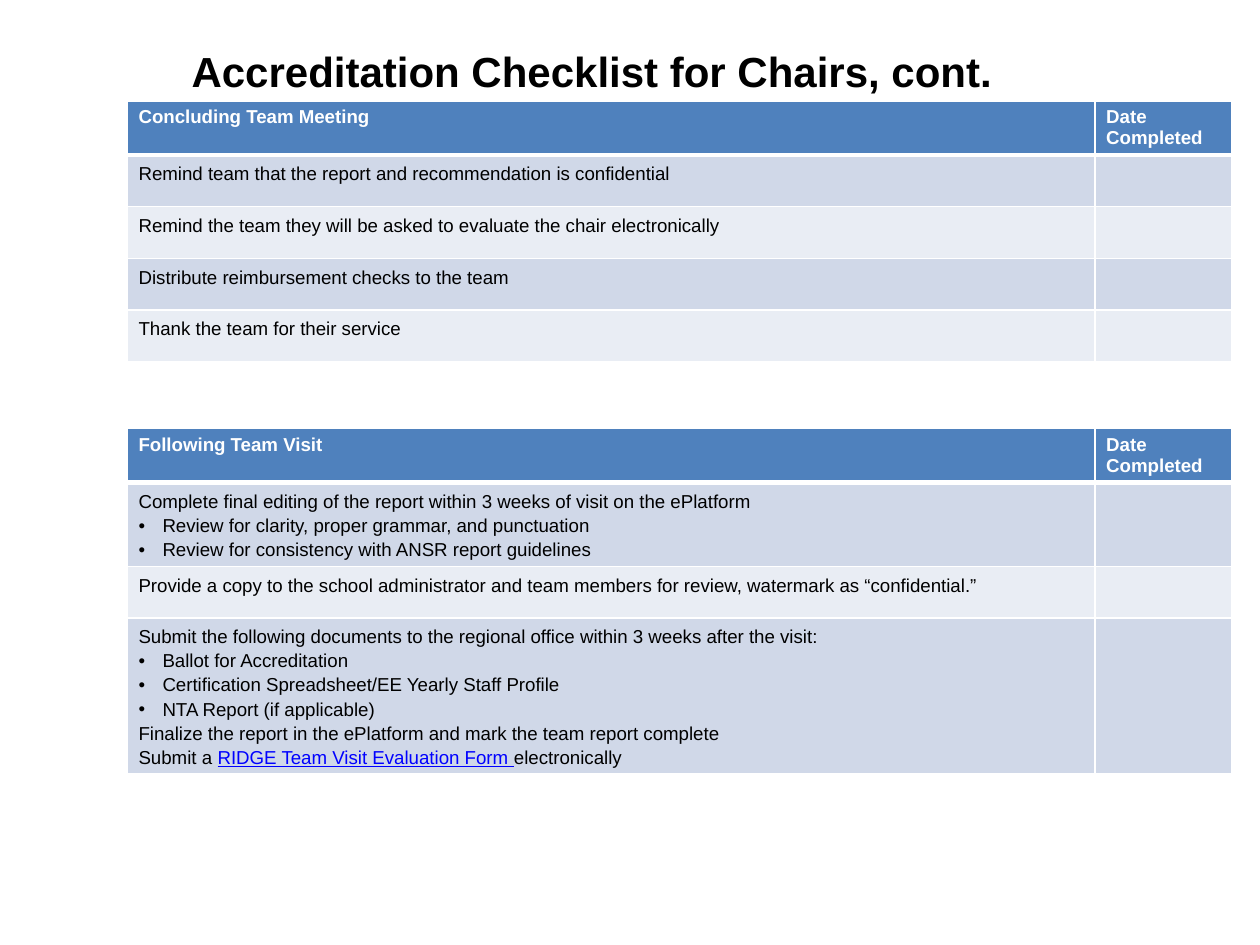
from dataclasses import dataclass

from lxml.etree import SubElement
from pptx import Presentation
from pptx.dml.color import RGBColor
from pptx.enum.text import MSO_ANCHOR, PP_ALIGN
from pptx.oxml.ns import qn
from pptx.util import Inches, Pt

BLACK = RGBColor(0x00, 0x00, 0x00)
WHITE = RGBColor(0xFF, 0xFF, 0xFF)
LINK_BLUE = RGBColor(0x00, 0x00, 0xFF)
HEADER_BLUE = RGBColor(0x4F, 0x81, 0xBD)
BANDS = (RGBColor(0xD0, 0xD8, 0xE8), RGBColor(0xE9, 0xED, 0xF4))

FONT = "Arial"
TABLE_LEFT = 1.01
COLUMN_WIDTHS = (7.68, 1.09)
HEADER_HEIGHT = 0.43
ROW_HEIGHT = 0.41
BULLET_INDENT = 0.19
BODY_FORMAT = {"name": FONT, "size": Pt(10.7), "bold": False}
HEADER_FORMAT = {**BODY_FORMAT, "bold": True}
TITLE_FORMAT = {"name": FONT, "size": Pt(24), "bold": True}
CELL_MARGINS = {
    "margin_left": Inches(0.09),
    "margin_right": Inches(0.09),
    "margin_top": Inches(0.045),
    "margin_bottom": Inches(0.045),
}


@dataclass
class Span:
    text: str
    link: bool = False


@dataclass
class Line:
    spans: list[Span]
    bullet: bool = False


@dataclass
class Checklist:
    top: float
    heading: str
    tasks: list[list[Line]]


def plain(text: str) -> Line:
    return Line([Span(text)])


def bullet(text: str) -> Line:
    return Line([Span(text)], bullet=True)


CHECKLISTS = [
    Checklist(0.8, "Concluding Team Meeting", [
        [plain("Remind team that the report and recommendation is confidential")],
        [plain("Remind the team they will be asked to evaluate the chair electronically")],
        [plain("Distribute reimbursement checks to the team")],
        [plain("Thank the team for their service")],
    ]),
    Checklist(3.4, "Following Team Visit", [
        [
            plain("Complete final editing of the report within 3 weeks of visit on the ePlatform"),
            bullet("Review for clarity, proper grammar, and punctuation"),
            bullet("Review for consistency with ANSR report guidelines"),
        ],
        [plain("Provide a copy to the school administrator and team members for review, "
               "watermark as “confidential.”")],
        [
            plain("Submit the following documents to the regional office within 3 weeks "
                  "after the visit:"),
            bullet("Ballot for Accreditation"),
            bullet("Certification Spreadsheet/EE Yearly Staff Profile"),
            bullet("NTA Report (if applicable)"),
            plain("Finalize the report in the ePlatform and mark the team report complete"),
            Line([
                Span("Submit a "),
                Span("RIDGE Team Visit Evaluation Form ", link=True),
                Span("electronically"),
            ]),
        ],
    ]),
]


def apply(target, values: dict) -> None:
    for name, value in values.items():
        setattr(target, name, value)


def add_run(paragraph, text: str, font_format: dict, color: RGBColor):
    run = paragraph.add_run()
    run.text = text
    apply(run.font, font_format)
    run.font.color.rgb = color
    return run


def style_cell(cell, color: RGBColor) -> None:
    apply(cell, CELL_MARGINS)
    cell.fill.solid()
    cell.fill.fore_color.rgb = color


def add_header_borders(cell) -> None:
    properties = cell._tc.get_or_add_tcPr()
    for side, points in {"lnL": 1, "lnR": 1, "lnT": 1, "lnB": 3}.items():
        line = SubElement(properties, qn(f"a:{side}"), w=str(Pt(points)))
        fill = SubElement(line, qn("a:solidFill"))
        SubElement(fill, qn("a:srgbClr"), val=str(WHITE))


def add_bullet(paragraph) -> None:
    properties = paragraph._p.get_or_add_pPr()
    properties.set("marL", str(Inches(BULLET_INDENT)))
    properties.set("indent", str(-Inches(BULLET_INDENT)))
    SubElement(properties, qn("a:buFont"), typeface=FONT)
    SubElement(properties, qn("a:buChar"), char="•")


def fill_task(cell, lines: list[Line]) -> None:
    for index, line in enumerate(lines):
        frame = cell.text_frame
        paragraph = frame.add_paragraph() if index else frame.paragraphs[0]
        if line.bullet:
            add_bullet(paragraph)
        paragraph.line_spacing = 1.15
        for span in line.spans:
            color = LINK_BLUE if span.link else BLACK
            run = add_run(paragraph, span.text, BODY_FORMAT, color)
            if span.link:
                run.font.underline = True


def add_checklist(slide, checklist: Checklist) -> None:
    row_count = len(checklist.tasks) + 1
    table = slide.shapes.add_table(
        row_count, len(COLUMN_WIDTHS), Inches(TABLE_LEFT), Inches(checklist.top),
        Inches(sum(COLUMN_WIDTHS)), Inches(HEADER_HEIGHT + ROW_HEIGHT * (row_count - 1)),
    ).table
    for column, width in zip(table.columns, COLUMN_WIDTHS):
        column.width = Inches(width)
    for index, row in enumerate(table.rows):
        row.height = Inches(ROW_HEIGHT if index else HEADER_HEIGHT)

    for column, text in enumerate((checklist.heading, "Date Completed")):
        cell = table.cell(0, column)
        add_header_borders(cell)
        style_cell(cell, HEADER_BLUE)
        add_run(cell.text_frame.paragraphs[0], text, HEADER_FORMAT, WHITE)

    for index, lines in enumerate(checklist.tasks):
        for cell in table.rows[index + 1].cells:
            style_cell(cell, BANDS[index % 2])
        fill_task(table.cell(index + 1, 0), lines)


def add_title(slide, text: str) -> None:
    title = slide.shapes.title
    apply(title, {"left": Inches(1.42), "top": Inches(0.27),
                  "width": Inches(8.08), "height": Inches(0.68)})
    apply(title.text_frame, {"vertical_anchor": MSO_ANCHOR.TOP, "margin_top": Inches(0.09),
                             "word_wrap": True})
    paragraph = title.text_frame.paragraphs[0]
    paragraph.alignment = PP_ALIGN.LEFT
    add_run(paragraph, text, TITLE_FORMAT, BLACK)


def main() -> None:
    presentation = Presentation()
    presentation.slide_width = Inches(10)
    presentation.slide_height = Inches(7.5)
    slide = presentation.slides.add_slide(presentation.slide_layouts[5])
    add_title(slide, "Accreditation Checklist for Chairs, cont.")
    for checklist in CHECKLISTS:
        add_checklist(slide, checklist)
    presentation.save("out.pptx")


if __name__ == "__main__":
    main()
